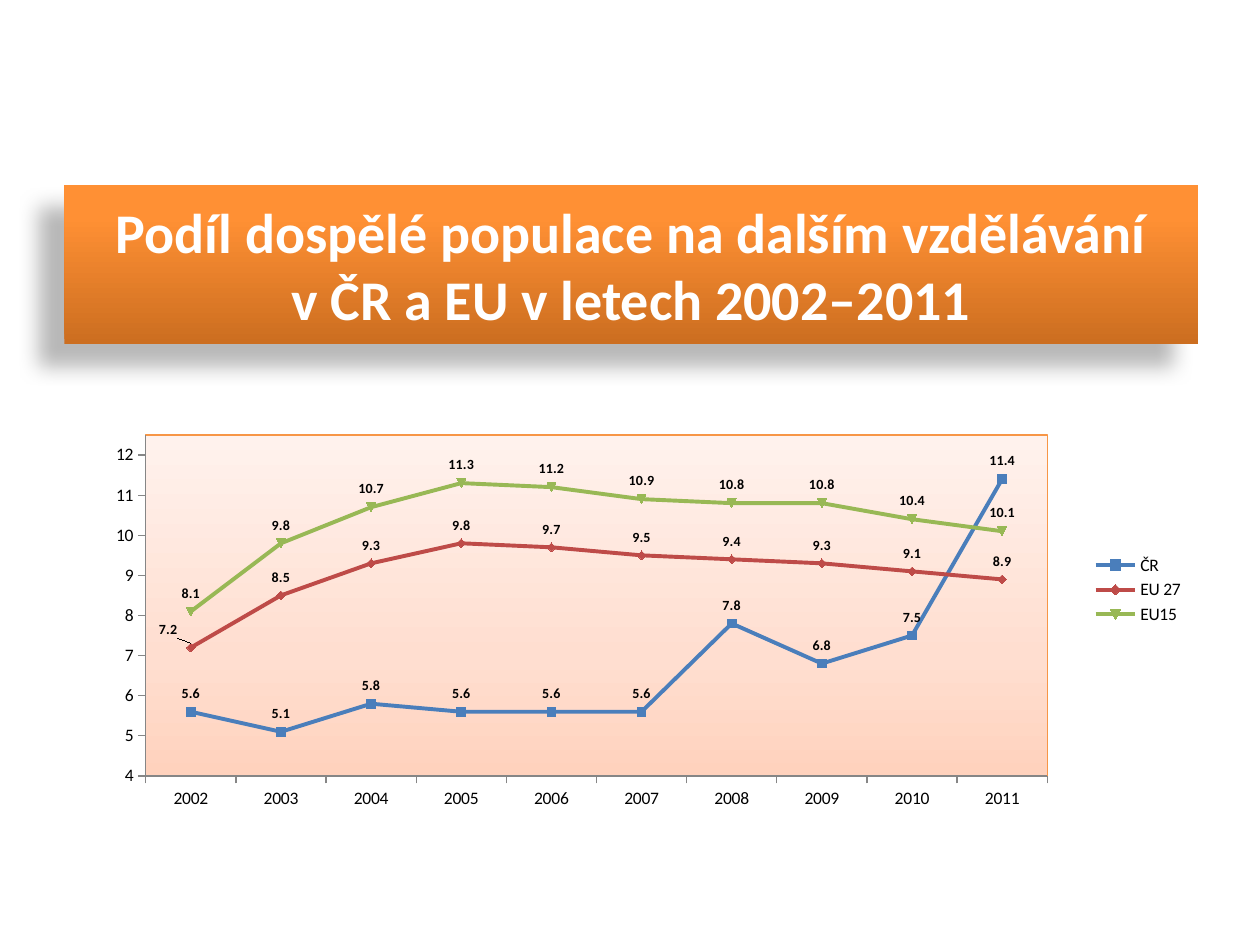
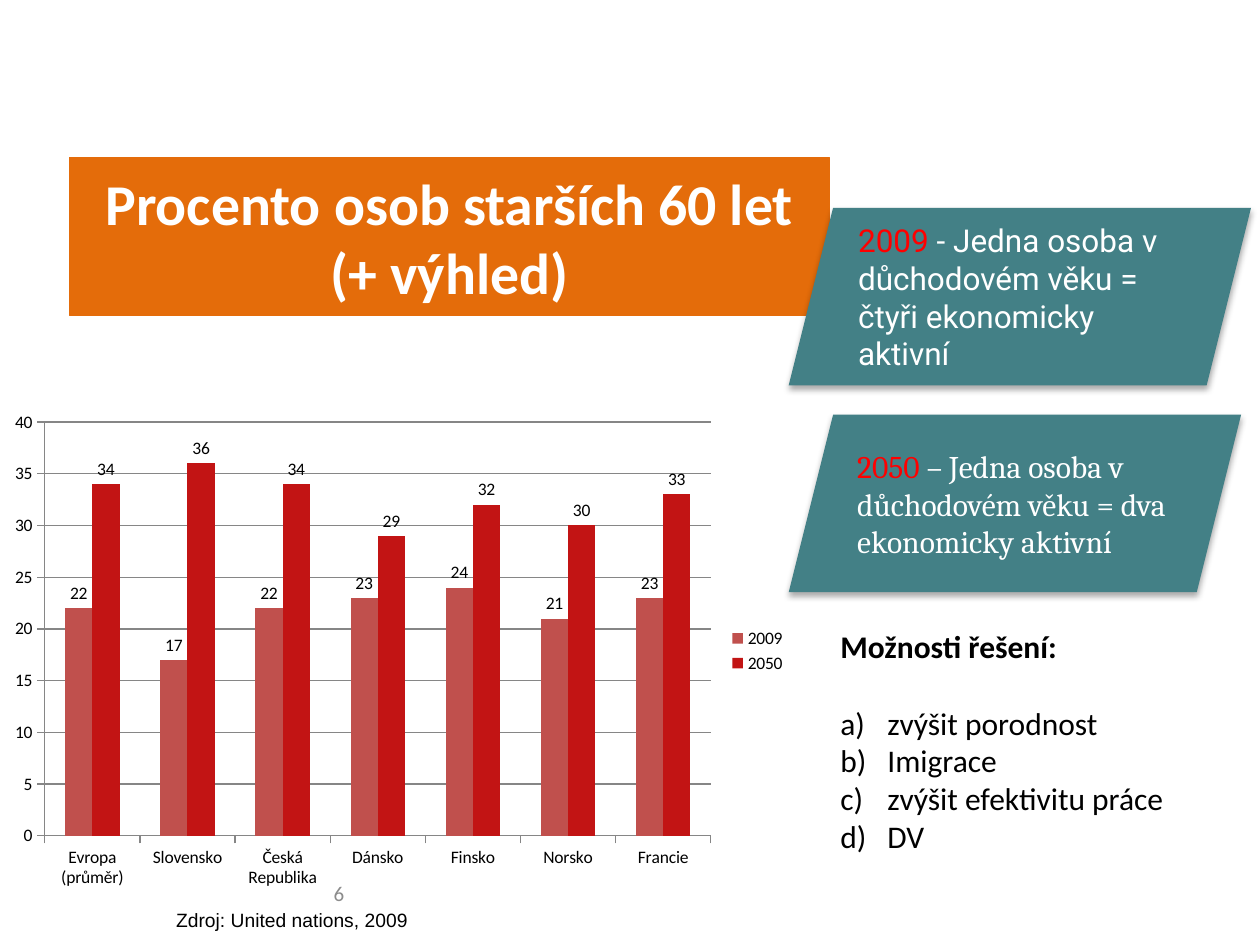
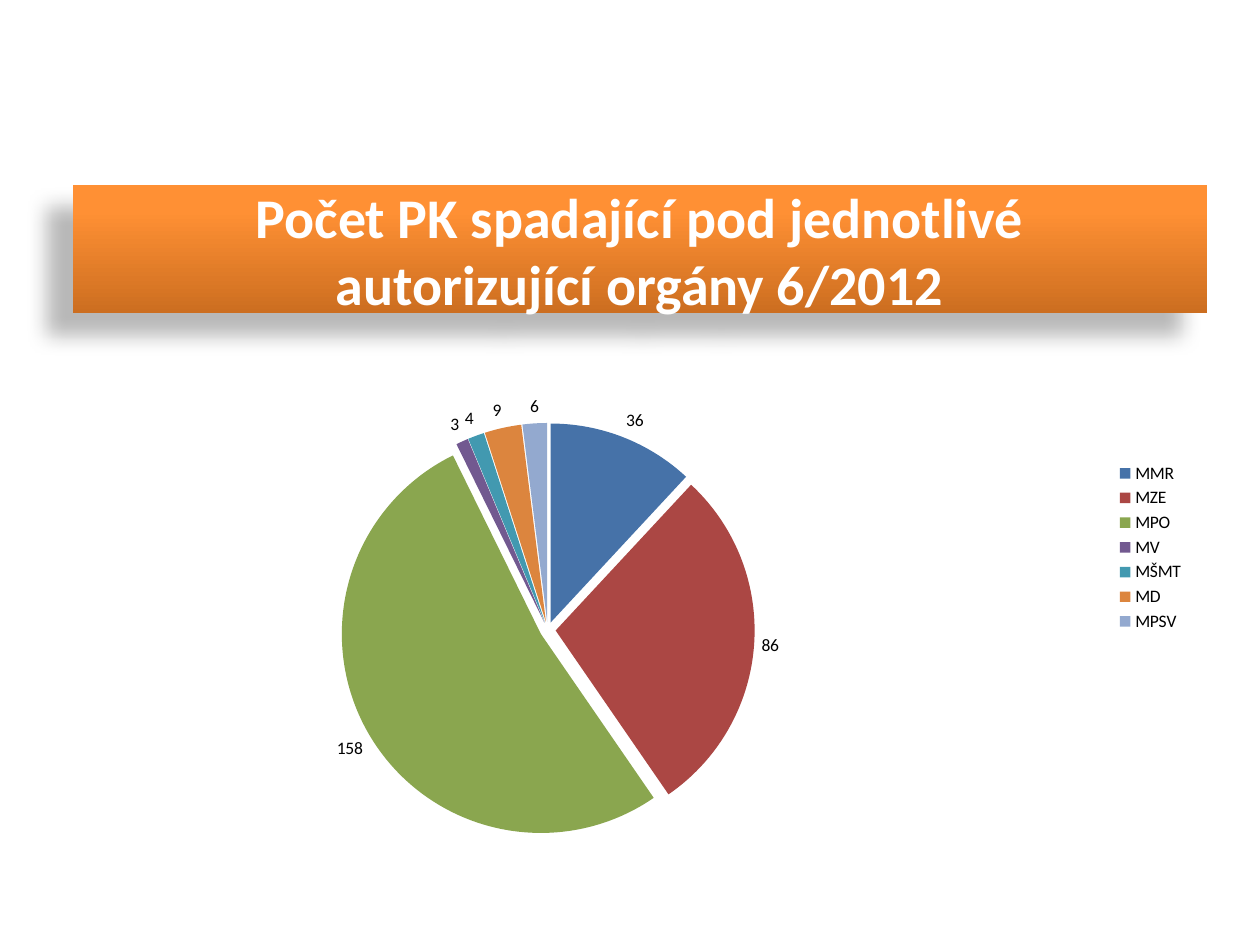
from pptx import Presentation
from pptx.chart.data import CategoryChartData
from pptx.dml.color import RGBColor
from pptx.enum.chart import XL_CHART_TYPE, XL_LABEL_POSITION, XL_LEGEND_POSITION, XL_TICK_MARK
from pptx.enum.shapes import MSO_SHAPE
from pptx.enum.text import MSO_ANCHOR, PP_ALIGN
from pptx.oxml import parse_xml
from pptx.oxml.ns import nsdecls, qn
from pptx.util import Cm, Pt

rgb = RGBColor.from_string
WHITE, BLACK, GREY, RED = "FFFFFF", "000000", "8C8C8C", "FF0000"
ORANGE, TEAL, AXIS = "E46C0A", "438086", "868686"
BANNER_STOPS = [(0, "CC6E20"), (80, "FF9034"), (100, "FF9136")]
PLOT_STOPS = [(0, "FFD2BD"), (35, "FFDED0"), (100, "FFF2ED")]


def add_text(p, text, size=18, color=BLACK, bold=False, font="Calibri", align=PP_ALIGN.LEFT):
    """Add text to a paragraph; a newline becomes a line break."""
    p.alignment = align
    for i, line in enumerate(text.split("\n")):
        if i:
            p.add_line_break()
        r = p.add_run()
        r.text = line
        r.font.size, r.font.bold, r.font.name = Pt(size), bold, font
        r.font.color.rgb = rgb(color)


def node(kind, *values):
    """Return the XML for a gradient, a shadow or a chart layout."""
    ns = nsdecls("a", "c")
    if kind == "gradient":
        stops = "".join(f'<a:gs pos="{pos * 1000}"><a:srgbClr val="{color}"/></a:gs>'
                        for pos, color in values)
        return parse_xml(f'<a:gradFill {ns} rotWithShape="1"><a:gsLst>{stops}</a:gsLst>'
                         '<a:lin ang="16200000" scaled="0"/></a:gradFill>')
    if kind == "shadow":
        alpha, blur, dist, angle = values
        return parse_xml(
            f'<a:effectLst {ns}><a:outerShdw blurRad="{Pt(blur)}" dist="{Pt(dist)}" '
            f'dir="{angle * 60000}" rotWithShape="0"><a:srgbClr val="{BLACK}">'
            f'<a:alpha val="{alpha * 1000}"/></a:srgbClr></a:outerShdw></a:effectLst>')
    x, y, w, h = values
    return parse_xml(
        f'<c:layout {ns}><c:manualLayout><c:layoutTarget val="inner"/>'
        '<c:xMode val="edge"/><c:yMode val="edge"/>'
        f'<c:x val="{x}"/><c:y val="{y}"/><c:w val="{w}"/><c:h val="{h}"/>'
        '</c:manualLayout></c:layout>')


prs = Presentation()
prs.slide_width, prs.slide_height = Cm(25.4), Cm(19.05)
education, ageing, authorities = [prs.slides.add_slide(prs.slide_layouts[6]) for _ in range(3)]

# Charts: slide, type, box, plot area, categories, series
chart_list = [
    (education, XL_CHART_TYPE.LINE_MARKERS, (1.27, 6.76, 22.86, 10.26),
     (0.073, 0.196, 0.795, 0.67), [str(year) for year in range(2002, 2012)],
     {"ČR": [5.6, 5.1, 5.8, 5.6, 5.6, 5.6, 7.8, 6.8, 7.5, 11.4],
      "EU 27": [7.2, 8.5, 9.3, 9.8, 9.7, 9.5, 9.4, 9.3, 9.1, 8.9],
      "EU15": [8.1, 9.8, 10.7, 11.3, 11.2, 10.9, 10.8, 10.8, 10.4, 10.1]}),
    (ageing, XL_CHART_TYPE.COLUMN_CLUSTERED, (0, 8.13, 16.1, 9.98),
     (0.056, 0.038, 0.834, 0.836),
     ["Evropa (průměr)", "Slovensko", "Česká Republika", "Dánsko", "Finsko", "Norsko", "Francie"],
     {"2009": [22, 17, 22, 23, 24, 21, 23], "2050": [34, 36, 34, 29, 32, 30, 33]}),
    (authorities, XL_CHART_TYPE.PIE, (1.27, 3.53, 22.86, 15.01),
     (0.16, 0.333, 0.535, 0.556), ["MMR", "MZE", "MPO", "MV", "MŠMT", "MD", "MPSV"],
     {"Series 1": [36, 86, 158, 3, 4, 9, 6]}),
]
charts = []
for slide, kind, box, layout, categories, series in chart_list:
    data = CategoryChartData()
    data.categories = categories
    for name, values in series.items():
        data.add_series(name, values)
    chart = slide.shapes.add_chart(kind, *[Cm(v) for v in box], data).chart
    charts.append(chart)
    chart.has_title = False
    chart.font.size, chart.font.name = Pt(10), "Calibri"
    chart.font.color.rgb = rgb(BLACK)
    chart.has_legend = True
    chart.legend.position = XL_LEGEND_POSITION.RIGHT
    chart.legend.include_in_layout = False
    plot_area = chart._chartSpace.chart.plotArea
    for old in plot_area.findall(qn("c:layout")):
        plot_area.remove(old)
    plot_area.insert(0, node("layout", *layout))
    for ser in chart.plots[0].series:
        ser.data_labels.show_value = True
    if kind != XL_CHART_TYPE.PIE:
        chart.plots[0].vary_by_categories = False
        for axis in (chart.category_axis, chart.value_axis):
            axis.major_tick_mark = XL_TICK_MARK.OUTSIDE
            axis.minor_tick_mark = XL_TICK_MARK.NONE
            axis.format.line.color.rgb = rgb(AXIS)
            axis.has_major_gridlines = False
line_chart, column_chart, pie_chart = charts

# Line chart: scale, lines and labels
axis = line_chart.value_axis
axis.minimum_scale, axis.maximum_scale, axis.major_unit = 4, 12.5, 1
for ser, color in zip(line_chart.plots[0].series, ("4A7EBB", "BE4B48", "98B855")):
    ser.smooth = False
    ser.format.line.color.rgb = rgb(color)
    ser.format.line.width = Pt(2.25)
    ser.marker.size = 5
    ser.marker.format.fill.solid()
    ser.marker.format.fill.fore_color.rgb = rgb(color)
    ser.marker.format.line.color.rgb = rgb(color)
    labels = ser.data_labels
    labels.position = XL_LABEL_POSITION.ABOVE
    labels.font.size, labels.font.bold = Pt(8), True

# The first EU 27 label stands a little to the left of its point
ser = line_chart.plots[0].series[1]
label = ser.points[0].data_label
label.position = XL_LABEL_POSITION.ABOVE
label.font.size, label.font.bold = Pt(8), True
idx = ser.data_labels._element.find(qn("c:dLbl")).find(qn("c:idx"))
idx.addnext(parse_xml(f'<c:layout {nsdecls("c")}><c:manualLayout>'
                      '<c:x val="-0.02"/><c:y val="0"/></c:manualLayout></c:layout>'))

# Line chart: plot background
plot_sp = parse_xml(f'<c:spPr {nsdecls("c", "a")}><a:ln w="9525"><a:solidFill>'
                    '<a:srgbClr val="F79646"/></a:solidFill></a:ln></c:spPr>')
plot_sp.insert(0, node("gradient", *PLOT_STOPS))
line_chart._chartSpace.chart.plotArea.append(plot_sp)

# Column chart
axis = column_chart.value_axis
axis.minimum_scale, axis.maximum_scale, axis.major_unit = 0, 40, 5
axis.has_major_gridlines = True
axis.major_gridlines.format.line.color.rgb = rgb(AXIS)
axis.tick_labels.number_format, axis.tick_labels.number_format_is_linked = "0", False
column_chart.plots[0].gap_width = 150
for ser, color in zip(column_chart.plots[0].series, ("C0504D", "C21414")):
    ser.format.fill.solid()
    ser.format.fill.fore_color.rgb = rgb(color)
    ser.data_labels.number_format, ser.data_labels.number_format_is_linked = "0", False
    ser.data_labels.position = XL_LABEL_POSITION.OUTSIDE_END

# Pie chart
ser = pie_chart.plots[0].series[0]
ser.data_labels.position = XL_LABEL_POSITION.OUTSIDE_END
slice_colors = ("4672A8", "AB4744", "8AA64F", "725990", "4299B0", "DC853E", "93A9CF")
for i, color in enumerate(slice_colors):
    fill = ser.points[i].format.fill
    fill.solid()
    fill.fore_color.rgb = rgb(color)
ser._element.find(qn("c:tx")).addnext(parse_xml(f'<c:explosion {nsdecls("c")} val="4"/>'))

# Titles: gradient banners with a shadow, and one plain band
for slide, box, text, size, is_banner in [
    (education, (1.3, 3.73, 22.86, 3.2),
     "Podíl dospělé populace na dalším vzdělávání\nv ČR a EU v letech 2002–2011", 32, True),
    (ageing, (1.4, 3.18, 15.32, 3.18), "Procento osob starších 60 let\n(+ výhled)", 33, False),
    (authorities, (1.47, 3.73, 22.86, 2.59),
     "Počet PK spadající pod jednotlivé\nautorizující orgány 6/2012", 32, True),
]:
    s = slide.shapes.add_shape(MSO_SHAPE.RECTANGLE, *[Cm(v) for v in box])
    if is_banner:
        s.line.fill.background()
        sp = s._element.spPr
        sp.find(qn("a:prstGeom")).addnext(node("gradient", *BANNER_STOPS))
        sp.append(node("shadow", 28, 11.8, 19.7, 141))
    else:
        s.shadow.inherit = False
        s.fill.solid()
        s.fill.fore_color.rgb = rgb(ORANGE)
        s.line.color.rgb = rgb(ORANGE)
        s.line.width = Pt(0.75)
    s.text_frame.vertical_anchor = MSO_ANCHOR.MIDDLE
    add_text(s.text_frame.paragraphs[0], text, size=size, color=WHITE, bold=True,
             align=PP_ALIGN.CENTER)

# Teal callouts
for top, width, year, text, font in [
    (4.19, 9.32, "2009", " - Jedna osoba v důchodovém věku = čtyři ekonomicky aktivní", "Roboto"),
    (8.36, 9.12, "2050", " – Jedna osoba v důchodovém věku = dva ekonomicky aktivní", "Cambria"),
]:
    s = ageing.shapes.add_shape(MSO_SHAPE.PARALLELOGRAM, Cm(15.9), Cm(top), Cm(width), Cm(3.58))
    s.fill.solid()
    s.fill.fore_color.rgb = rgb(TEAL)
    s.line.fill.background()
    s._element.spPr.append(node("shadow", 32, 3.5, 2.2, 90))
    s.text_frame.vertical_anchor = MSO_ANCHOR.MIDDLE
    p = s.text_frame.paragraphs[0]
    add_text(p, year, color=RED, font=font)
    add_text(p, text, color=WHITE, font=font)

# Slide number, source and heading of the options
for box, text, anchor, style in [
    ((1.27, 17.35, 5.92, 1.32), "6", MSO_ANCHOR.MIDDLE,
     {"size": 12, "color": GREY, "align": PP_ALIGN.RIGHT}),
    ((3.3, 18.19, 9.12, 0.74), "Zdroj: United nations, 2009", MSO_ANCHOR.TOP,
     {"size": 11, "font": "Arial"}),
    ((16.69, 12.52, 8.13, 4.88), "Možnosti řešení:", MSO_ANCHOR.TOP, {"bold": True}),
]:
    tf = ageing.shapes.add_textbox(*[Cm(v) for v in box]).text_frame
    tf.word_wrap = True
    tf.vertical_anchor = anchor
    add_text(tf.paragraphs[0], text, **style)

# Lettered options below the heading
for i, option in enumerate(["zvýšit porodnost", "Imigrace", "zvýšit efektivitu práce", "DV"]):
    p = tf.add_paragraph()
    pPr = p._p.get_or_add_pPr()
    pPr.set("marL", str(Cm(0.95)))
    pPr.set("indent", str(-Cm(0.95)))
    pPr.append(parse_xml(f'<a:buAutoNum {nsdecls("a")} type="alphaLcParenR"/>'))
    if i == 0:
        p.space_before = Pt(22)
    add_text(p, option)

prs.save("out.pptx")
